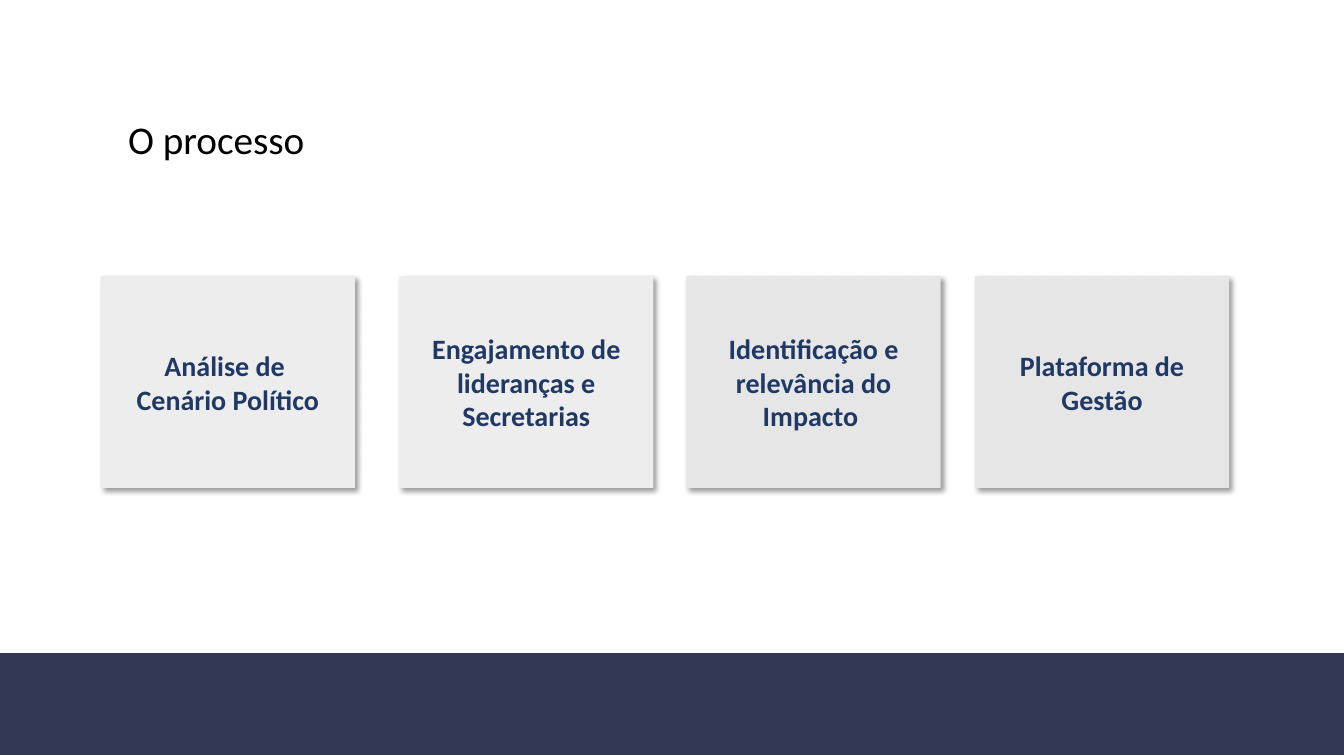
from lxml import etree
from pptx import Presentation
from pptx.dml.color import RGBColor
from pptx.enum import shapes, text
from pptx.oxml import ns
from pptx.util import Inches, Pt

NAVY = RGBColor(0x33, 0x38, 0x54)
BLUE = RGBColor(0x20, 0x38, 0x64)
BLACK = RGBColor(0, 0, 0)
LIGHT_GREY = RGBColor(0xED, 0xED, 0xED)
GREY = RGBColor(0xE7, 0xE6, 0xE6)


def add_rectangle(left, top, width, height, color):
    box = page.shapes.add_shape(
        shapes.MSO_SHAPE.RECTANGLE,
        Inches(left), Inches(top), Inches(width), Inches(height))
    box.shadow.inherit = False
    box.fill.solid()
    box.fill.fore_color.rgb = color
    box.line.fill.background()
    return box


def add_shadow(box):
    """Cast a soft black shadow down and to the right."""
    effects = box._element.spPr.find(ns.qn("a:effectLst"))
    shadow = etree.SubElement(
        effects, ns.qn("a:outerShdw"), blurRad=str(Pt(4)), dist=str(Pt(3)),
        dir="2700000", algn="tl", rotWithShape="0")
    black = etree.SubElement(shadow, ns.qn("a:srgbClr"), val="000000")
    etree.SubElement(black, ns.qn("a:alpha"), val="40000")


deck = Presentation()
deck.slide_width = Inches(13.33)
deck.slide_height = Inches(7.5)
page = deck.slides.add_slide(deck.slide_layouts[5])

# Title
title = page.shapes.title
title.left, title.top = Inches(1.17), Inches(1.09)
title.width, title.height = Inches(6.66), Inches(0.57)
frame = title.text_frame
frame.word_wrap = True
frame.auto_size = text.MSO_AUTO_SIZE.NONE
frame.vertical_anchor = text.MSO_ANCHOR.TOP
para = frame.paragraphs[0]
para.alignment = text.PP_ALIGN.LEFT
span = para.add_run()
span.text = "O processo"
span.font.name = "Calibri"
span.font.size = Pt(28)
span.font.color.rgb = BLACK

# Process steps
steps = [
    (1, LIGHT_GREY, ["Análise de ", "Cenário Político"]),
    (3.96, LIGHT_GREY, ["Engajamento de lideranças e Secretarias"]),
    (6.81, GREY, ["Identificação e relevância do Impacto "]),
    (9.67, GREY, ["Plataforma de Gestão"]),
]
for left, color, lines in steps:
    card = add_rectangle(left, 2.74, 2.52, 2.1, color)
    add_shadow(card)
    frame = card.text_frame
    frame.word_wrap = True
    frame.vertical_anchor = text.MSO_ANCHOR.MIDDLE
    for index, line in enumerate(lines):
        para = frame.add_paragraph() if index else frame.paragraphs[0]
        para.alignment = text.PP_ALIGN.CENTER
        span = para.add_run()
        span.text = line
        span.font.name = "Calibri"
        span.font.size = Pt(20)
        span.font.bold = True
        span.font.color.rgb = BLUE

# Footer band
add_rectangle(0, 6.48, 13.33, 1.01, NAVY)

deck.save("out.pptx")
